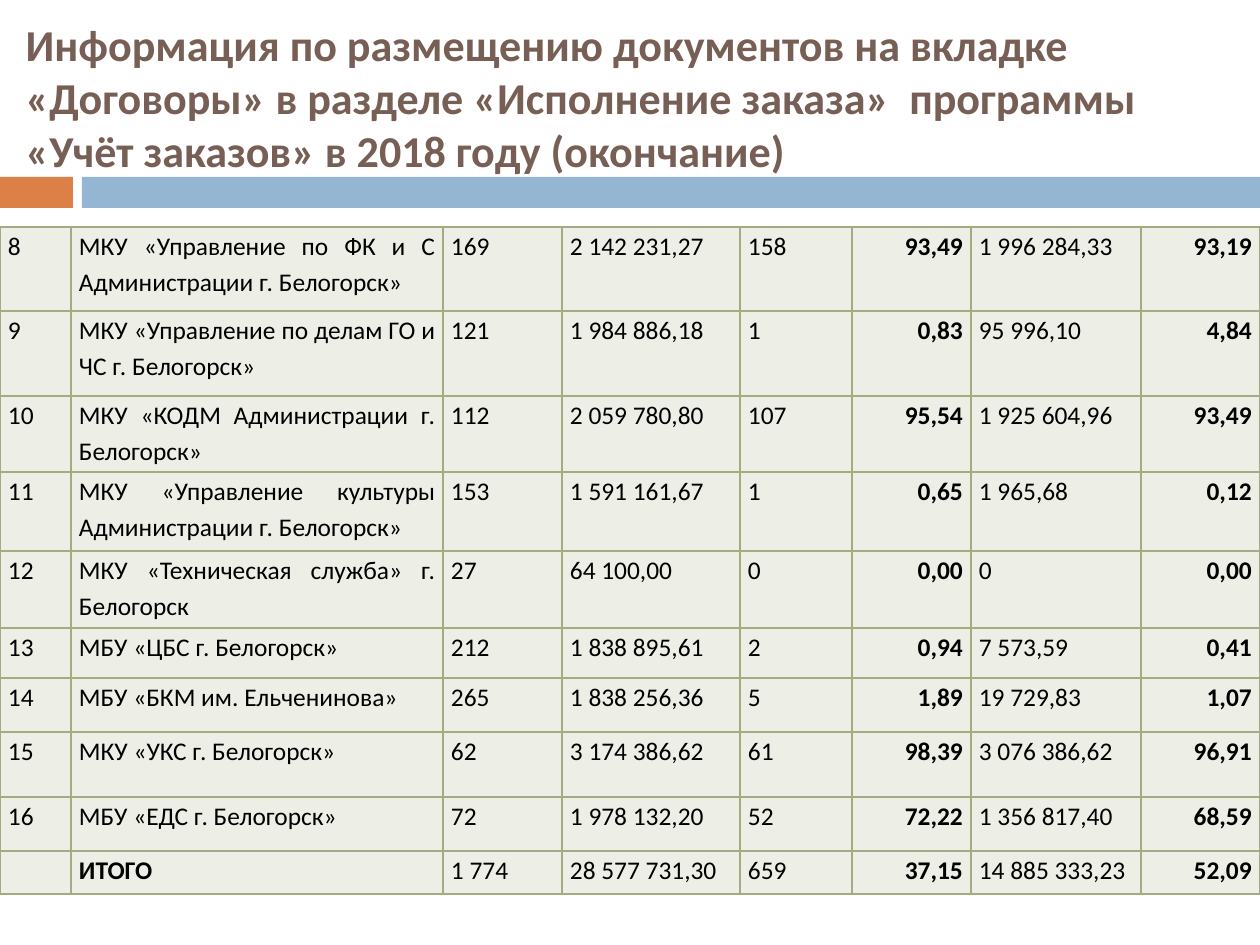
from lxml.etree import SubElement
from pptx import Presentation
from pptx.dml.color import RGBColor
from pptx.enum.shapes import MSO_SHAPE
from pptx.enum.text import MSO_ANCHOR, MSO_AUTO_SIZE, PP_ALIGN
from pptx.oxml.ns import qn
from pptx.util import Emu, Pt

EMU_PER_PX = 914400 / 126
FONT = "Calibri"
NO_BREAK_SPACE = chr(160)
TITLE = (
    "Информация по размещению документов на вкладке «Договоры» в разделе "
    "«Исполнение заказа»  программы «Учёт заказов» в 2018 году (окончание)"
)
COLUMN_WIDTHS = [71, 372, 119, 178, 112, 119, 170, 119]
ROW_HEIGHTS = [84, 85, 76, 79, 77, 50, 54, 65, 54, 43]
SUM_COLUMNS = (3, 6)
PERCENT_COLUMNS = (5, 7)
ROWS = [
    ("8", "МКУ «Управление по ФК и С Администрации г. Белогорск»", "169",
     "2 142 231,27", "158", "93,49", "1 996 284,33", "93,19"),
    ("9", "МКУ «Управление по делам ГО и ЧС г. Белогорск»", "121",
     "1 984 886,18", "1", "0,83", "95 996,10", "4,84"),
    ("10", "МКУ «КОДМ Администрации г. Белогорск»", "112",
     "2 059 780,80", "107", "95,54", "1 925 604,96", "93,49"),
    ("11", "МКУ «Управление культуры Администрации г. Белогорск»", "153",
     "1 591 161,67", "1", "0,65", "1 965,68", "0,12"),
    ("12", "МКУ «Техническая служба» г. Белогорск", "27",
     "64 100,00", "0", "0,00", "0", "0,00"),
    ("13", "МБУ «ЦБС г. Белогорск»", "212",
     "1 838 895,61", "2", "0,94", "7 573,59", "0,41"),
    ("14", "МБУ «БКМ им. Ельченинова»", "265",
     "1 838 256,36", "5", "1,89", "19 729,83", "1,07"),
    ("15", "МКУ «УКС г. Белогорск»", "62",
     "3 174 386,62", "61", "98,39", "3 076 386,62", "96,91"),
    ("16", "МБУ «ЕДС г. Белогорск»", "72",
     "1 978 132,20", "52", "72,22", "1 356 817,40", "68,59"),
    ("", "ИТОГО", "1 774",
     "28 577 731,30", "659", "37,15", "14 885 333,23", "52,09"),
]


def px(length):
    """Turn pixels into EMU."""
    return Emu(round(length * EMU_PER_PX))


def color(value):
    """Turn a hex string into a colour."""
    return RGBColor.from_string(value)


def format_paragraph(paragraph, size, font_color, bold, alignment):
    """Set the font and alignment of a paragraph."""
    paragraph.alignment = alignment
    font = paragraph.font
    font.name = FONT
    font.size = Pt(size)
    font.bold = bold
    font.color.rgb = color(font_color)


def add_bar(slide, left, width, fill):
    """Add one block of the band under the title."""
    shape = slide.shapes.add_shape(
        MSO_SHAPE.RECTANGLE, px(left), px(177), px(width), px(31))
    shape.shadow.inherit = False
    shape.fill.solid()
    shape.fill.fore_color.rgb = color(fill)
    shape.line.fill.background()


def set_title(slide):
    """Place and format the title placeholder."""
    title = slide.shapes.title
    title.left, title.top, title.width, title.height = map(px, (13, 29, 1247, 136))
    frame = title.text_frame
    frame.text = TITLE
    frame.word_wrap = True
    frame.auto_size = MSO_AUTO_SIZE.NONE
    frame.vertical_anchor = MSO_ANCHOR.MIDDLE
    format_paragraph(frame.paragraphs[0], 25.2, "775F55", True, PP_ALIGN.LEFT)


def set_borders(cell, line_color, width):
    """Draw the four borders of a table cell."""
    properties = cell._tc.get_or_add_tcPr()
    for position, side in enumerate(("lnL", "lnR", "lnT", "lnB")):
        line = SubElement(properties, qn(f"a:{side}"), w=str(Pt(width)))
        fill = SubElement(line, qn("a:solidFill"))
        SubElement(fill, qn("a:srgbClr"), val=line_color)
        properties.insert(position, line)


def fill_cell(cell, text, bold, alignment):
    """Write and format one table cell."""
    cell.margin_left = cell.margin_right = px(8)
    cell.margin_top = cell.margin_bottom = 0
    cell.fill.solid()
    cell.fill.fore_color.rgb = color("EDEEE6")
    set_borders(cell, "A5AB81", 1)
    cell.text = text
    paragraph = cell.text_frame.paragraphs[0]
    paragraph.line_spacing = 1.15
    format_paragraph(paragraph, 14.5, "000000", bold, alignment)


def add_contract_table(slide):
    """Add the table of contracts by institution."""
    table = slide.shapes.add_table(
        len(ROWS), len(COLUMN_WIDTHS), 0, px(227),
        px(sum(COLUMN_WIDTHS)), px(sum(ROW_HEIGHTS))).table
    table.first_row = table.horz_banding = False
    for column, width in zip(table.columns, COLUMN_WIDTHS):
        column.width = px(width)
    for row, height, texts in zip(table.rows, ROW_HEIGHTS, ROWS):
        row.height = px(height)
        for index, (cell, text) in enumerate(zip(row.cells, texts)):
            percent = index in PERCENT_COLUMNS
            if index in SUM_COLUMNS:
                text = text.replace(" ", NO_BREAK_SPACE)
            fill_cell(cell, text, percent or text == "ИТОГО",
                      PP_ALIGN.RIGHT if percent else PP_ALIGN.JUSTIFY)


def main():
    """Build the slide and save it."""
    presentation = Presentation()
    presentation.slide_width, presentation.slide_height = px(1260), px(945)
    slide = presentation.slides.add_slide(presentation.slide_layouts[5])
    add_bar(slide, 0, 73, "DD8047")
    add_bar(slide, 82, 1178, "94B6D2")
    set_title(slide)
    add_contract_table(slide)
    presentation.save("out.pptx")


if __name__ == "__main__":
    main()
